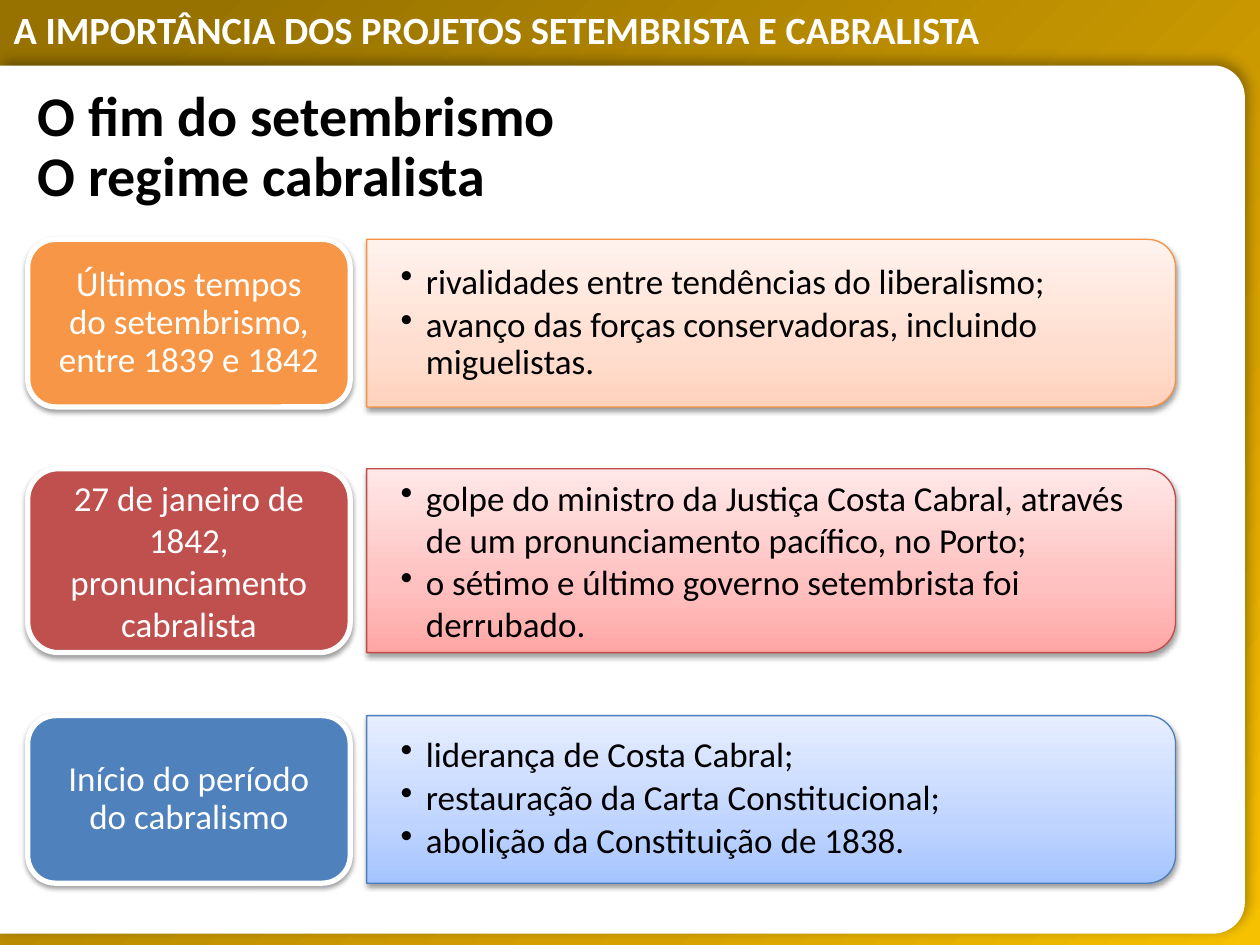
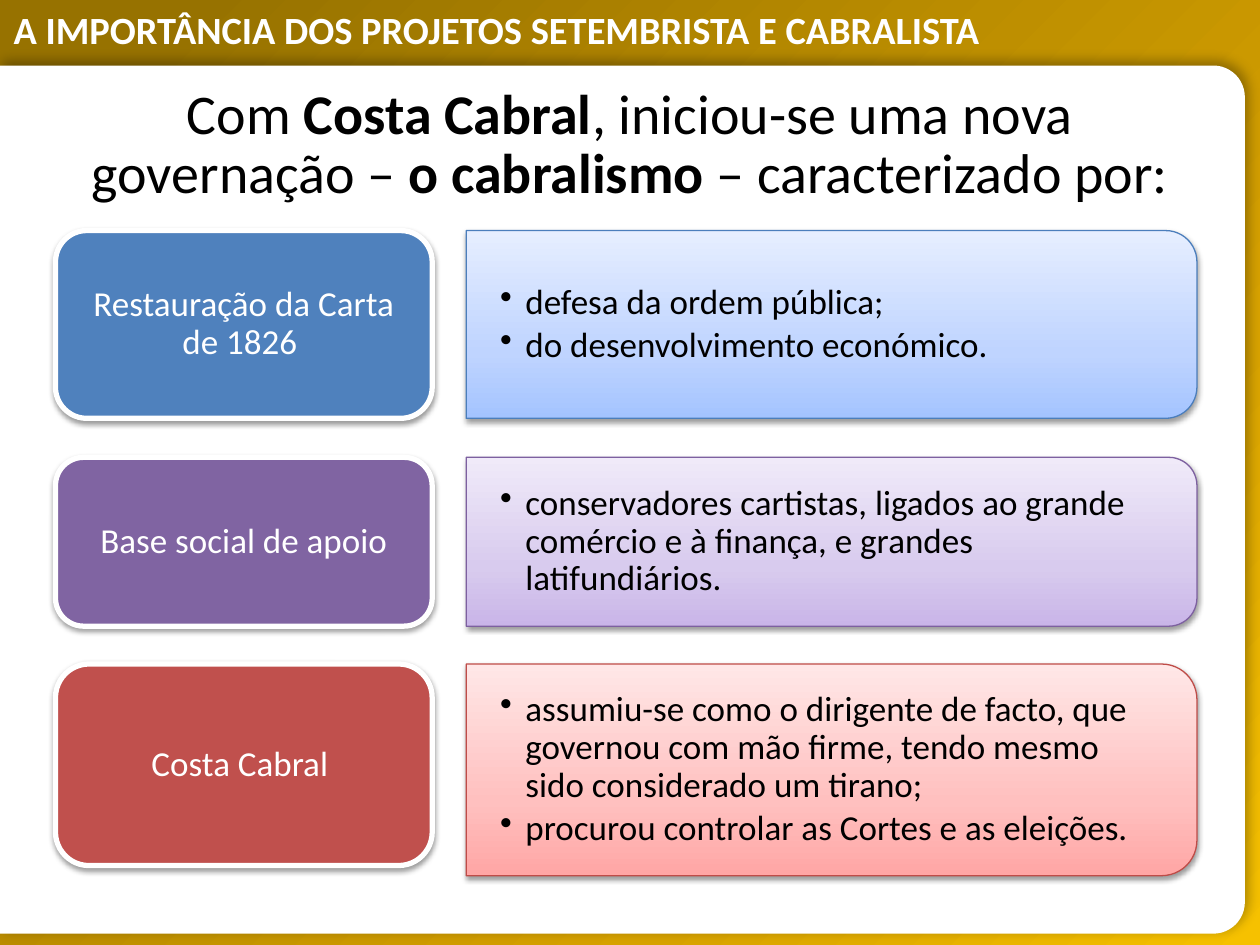
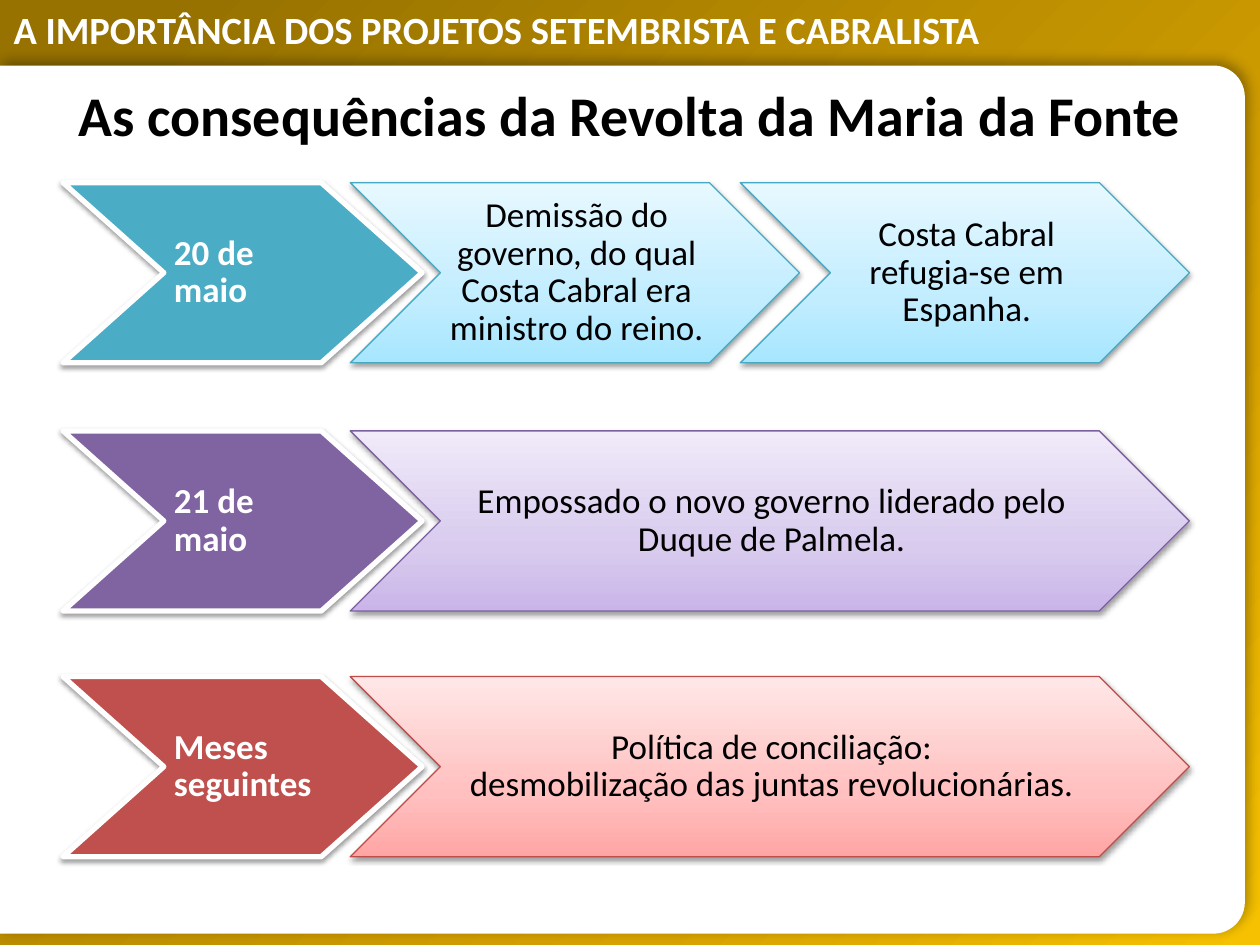
"""Build three slides on the Setembrista and Cabralista projects."""
from math import cos, pi, sin

from lxml import etree
from pptx import Presentation
from pptx.dml.color import RGBColor
from pptx.enum.shapes import MSO_SHAPE
from pptx.enum.text import MSO_ANCHOR, MSO_AUTO_SIZE, PP_ALIGN
from pptx.oxml.ns import qn
from pptx.util import Inches, Pt

RECTANGLE = MSO_SHAPE.RECTANGLE
ROUNDED = MSO_SHAPE.ROUNDED_RECTANGLE
CHEVRON = MSO_SHAPE.CHEVRON
LEFT, CENTER = PP_ALIGN.LEFT, PP_ALIGN.CENTER
TOP, MIDDLE = MSO_ANCHOR.TOP, MSO_ANCHOR.MIDDLE
NO_AUTOFIT = MSO_AUTO_SIZE.NONE

FONT = "Calibri"
COLORS = {
    "white": "FFFFFF", "black": "000000",
    "orange": "F79646", "orange line": "F69240",
    "red": "C0504D", "red line": "BF4C48",
    "blue": "4F81BD", "blue line": "4B7EBC",
    "purple": "8064A2", "purple line": "7D60A0",
    "aqua": "4BACC6", "aqua line": "46AAC5",
}
GRADIENTS = {
    "gold": [(9, "977200"), (72, "D7A200"), (100, "F6C100")],
    "orange": [(0, "FFD2BD"), (35, "FFDED0"), (100, "FFF2ED")],
    "red": [(0, "FFA6A5"), (35, "FFC0BF"), (100, "FFE7E7")],
    "blue": [(0, "A4C4FF"), (35, "BFD4FF"), (100, "E6EEFF")],
    "purple": [(0, "C9B5E8"), (35, "D8CBEE"), (100, "F0EAF9")],
    "aqua": [(0, "A7E6FF"), (35, "C1EDFF"), (100, "E7F8FF")],
}
CARD_SHADOW = {"alpha": 38, "blur": 3.1, "distance": 1.6, "angle": 90}
PANEL_SHADOW = {"alpha": 30, "blur": 7, "distance": 3, "angle": 315}


def rgb(name):
    """Return the named colour."""
    return RGBColor.from_string(COLORS[name])


def write(frame, paras, size=20, color="black", bold=False, align=LEFT, anchor=MIDDLE,
          spacing=0.9, after=0, bullets=False, insets=(0.1, 0.05, 0.1, 0.05)):
    """Fill a text frame with paragraphs, each a string or a list of (text, bold) spans."""
    frame.word_wrap = True
    frame.auto_size = NO_AUTOFIT
    frame.vertical_anchor = anchor
    (frame.margin_left, frame.margin_top,
     frame.margin_right, frame.margin_bottom) = map(Inches, insets)
    for index, content in enumerate(paras):
        para = frame.add_paragraph() if index else frame.paragraphs[0]
        para.alignment = align
        para.line_spacing = spacing
        para.space_before, para.space_after = Pt(0), Pt(after)
        if bullets:
            properties = para._p.get_or_add_pPr()
            properties.set("marL", str(Inches(0.2)))
            properties.set("indent", str(-Inches(0.2)))
            etree.SubElement(properties, qn("a:buChar"), char="•")
        spans = [(content, bold)] if isinstance(content, str) else content
        for text, heavy in spans:
            for number, line in enumerate(text.split("\n")):
                if number:
                    para.add_line_break()
                span = para.add_run()
                span.text = line
                span.font.name, span.font.size = FONT, Pt(size)
                span.font.bold = heavy
                span.font.color.rgb = rgb(color)


class Deck:
    """Hold the presentation, its shared style and the current slide."""

    def __init__(self):
        """Set the slide size and choose the title-only layout."""
        self.deck = Presentation()
        self.deck.slide_width, self.deck.slide_height = Inches(10), Inches(7.5)
        self.layout = self.deck.slide_layouts[5]
        self.page = None

    def new_page(self, paras, at, **style):
        """Add a slide and place its title."""
        self.page = self.deck.slides.add_slide(self.layout)
        title = self.page.shapes.title
        title.left, title.top, title.width, title.height = map(Inches, at)
        write(title.text_frame, paras, size=32, **style)

    def frame_layout(self, heading):
        """Draw the gold frame, white panel and heading, and move them to the layout."""
        backdrop = self.shape(RECTANGLE, (0, 0, 10, 7.5))
        self.gradient(backdrop, "gold", 315)
        panel = self.right_rounded((0, 0.52, 9.88, 6.89), 0.25)
        self.solid(panel, "white")
        self.shadow(panel, **PANEL_SHADOW)
        box = self.page.shapes.add_textbox(*map(Inches, (0.01, 0.14, 9.22, 0.35)))
        write(box.text_frame, [heading], size=22, color="white", bold=True,
              anchor=TOP, spacing=Pt(16))
        for shape in (backdrop, panel, box):
            self.layout.shapes.element.append(shape.element)

    def shape(self, kind, at):
        """Add a preset shape without line or shadow."""
        return self.plain(self.page.shapes.add_shape(kind, *map(Inches, at)))

    def right_rounded(self, at, radius):
        """Add a rectangle whose two right corners are rounded."""
        left, top, width, height = at
        right, bottom = left + width, top + height
        points = [(left, top)]
        for center_y, start in ((top + radius, -pi / 2), (bottom - radius, 0)):
            for step in range(13):
                turn = start + step * pi / 24
                points.append((right - radius + radius * cos(turn),
                               center_y + radius * sin(turn)))
        points.append((left, bottom))
        points = [(Inches(x), Inches(y)) for x, y in points]
        builder = self.page.shapes.build_freeform(*points[0])
        builder.add_line_segments(points[1:], close=True)
        return self.plain(builder.convert_to_shape())

    def plain(self, shape):
        """Strip a shape of its theme line and shadow."""
        shape.line.fill.background()
        shape.shadow.inherit = False
        return shape

    def solid(self, shape, color):
        """Fill a shape with one colour."""
        shape.fill.solid()
        shape.fill.fore_color.rgb = rgb(color)

    def gradient(self, shape, name, angle=90):
        """Fill a shape with a named gradient."""
        shape.fill.gradient()
        shape.fill.gradient_angle = angle
        stops = shape.element.spPr.find(qn("a:gradFill")).find(qn("a:gsLst"))
        for stop in list(stops):
            stops.remove(stop)
        for position, color in GRADIENTS[name]:
            stop = etree.SubElement(stops, qn("a:gs"), pos=str(position * 1000))
            etree.SubElement(stop, qn("a:srgbClr"), val=color)

    def shadow(self, shape, alpha, blur, distance, angle):
        """Give a shape an outer shadow."""
        effects = shape.element.spPr.find(qn("a:effectLst"))
        outer = etree.SubElement(effects, qn("a:outerShdw"), blurRad=str(Pt(blur)),
                                 dist=str(Pt(distance)), dir=str(angle * 60000),
                                 rotWithShape="0")
        color = etree.SubElement(outer, qn("a:srgbClr"), val=COLORS["black"])
        etree.SubElement(color, qn("a:alpha"), val=str(alpha * 1000))

    def outline(self, shape, color, width):
        """Give a shape a line and the card shadow."""
        shape.line.color.rgb = rgb(color)
        shape.line.width = Pt(width)
        self.shadow(shape, **CARD_SHADOW)

    def label(self, kind, at, color, paras, **style):
        """Add a solid shape with a white border and white text."""
        shape = self.shape(kind, at)
        self.solid(shape, color)
        self.outline(shape, "white", 3)
        write(shape.text_frame, paras, color="white", **style)
        return shape

    def detail(self, shape, color, paras, **style):
        """Turn a shape into a pale gradient card with black text."""
        self.gradient(shape, color)
        self.outline(shape, f"{color} line", 0.75)
        write(shape.text_frame, paras, **style)

    def topic(self, columns, top, heights, color, heading, bullets, inset,
              spacing=0.9, after=3):
        """Add a rounded label with its bulleted card to the right."""
        label_left, label_width, card_left, card_width = columns
        label_height, card_height = heights
        card = self.right_rounded((card_left, top, card_width, card_height), card_height / 6)
        self.detail(card, color, bullets, bullets=True, spacing=spacing, after=after,
                    insets=(0.27, 0.2, 0.35, 0.2))
        self.label(ROUNDED, (label_left, top, label_width, label_height), color, heading,
                   align=CENTER, spacing=spacing, insets=(inset, 0.11, inset, 0.11))

    def step(self, top, color, date, events):
        """Add a date chevron followed by equal event chevrons."""
        height, start, end, overlap = 1.43, 2.78, 9.44, 0.47
        date_shape = self.label(CHEVRON, (0.5, top, 2.85, height), color, [date], bold=True,
                                insets=(0.08, 0.08, 0.05, 0.08))
        date_shape.adjustments[0] = 0.56
        count = len(events)
        width = (end - start + overlap * (count - 1)) / count
        for index, event in enumerate(events):
            left = start + index * (width - overlap)
            self.detail(self.shape(CHEVRON, (left, top, width, height)), color, [event],
                        align=CENTER, insets=(0.03, 0.01, 0, 0.01))


def main():
    """Build and save the slides."""
    deck = Deck()
    deck.new_page(["O fim do setembrismo\nO regime cabralista"], (0.2, 0.65, 8.49, 1.05),
                  bold=True, spacing=Pt(34))
    deck.frame_layout("A IMPORTÂNCIA DOS PROJETOS SETEMBRISTA E CABRALISTA")
    columns = (0.22, 2.56, 2.91, 6.42)
    deck.topic(columns, 1.9, (1.33, 1.33), "orange",
               ["Últimos tempos do setembrismo, entre 1839 e 1842"],
               ["rivalidades entre tendências do liberalismo;",
                "avanço das forças conservadoras, incluindo miguelistas."], 0.16)
    deck.topic(columns, 3.72, (1.46, 1.46), "red",
               ["27 de janeiro de 1842,", "pronunciamento", "cabralista"],
               ["golpe do ministro da Justiça Costa Cabral, através de um "
                "pronunciamento pacífico, no Porto;",
                "o sétimo e último governo setembrista foi derrubado."],
               0.16, spacing=1.0, after=0)
    deck.topic(columns, 5.68, (1.33, 1.33), "blue", ["Início do período do cabralismo"],
               ["liderança de Costa Cabral;", "restauração da Carta Constitucional;",
                "abolição da Constituição de 1838."], 0.16)

    deck.new_page([[("Com ", False), ("Costa Cabral", True),
                    (", iniciou-se uma nova governação – ", False),
                    ("o cabralismo ", True), ("– caracterizado por:", False)]],
                  (0.49, 0.6, 9.02, 1.11), align=CENTER, spacing=Pt(34),
                  insets=(0.08, 0.08, 0.08, 0.08))
    columns = (0.44, 2.99, 3.7, 5.8)
    deck.topic(columns, 1.83, (1.49, 1.49), "blue", ["Restauração da Carta de 1826 "],
               ["defesa da ordem pública;", "do desenvolvimento económico."], 0.18)
    deck.topic(columns, 3.63, (1.34, 1.34), "purple", ["Base social de apoio"],
               ["conservadores cartistas, ligados ao grande comércio e à finança, "
                "e grandes latifundiários."], 0.18)
    deck.topic(columns, 5.27, (1.6, 1.68), "red", ["Costa Cabral "],
               ["assumiu-se como o dirigente de facto, que governou com mão firme, "
                "tendo mesmo sido considerado um tirano;",
                "procurou controlar as Cortes e as eleições."], 0.18)

    deck.new_page(["As consequências da Revolta da Maria da Fonte"], (0.5, 0.56, 9, 0.69),
                  bold=True, align=CENTER, spacing=1.0)
    deck.step(1.45, "aqua", "20 de\nmaio",
              ["Demissão do governo, do qual Costa Cabral era ministro do reino.",
               "Costa Cabral refugia-se em Espanha."])
    deck.step(3.42, "purple", "21 de\nmaio",
              ["Empossado o novo governo liderado pelo Duque de Palmela."])
    deck.step(5.37, "red", "Meses seguintes",
              ["Política de conciliação:\ndesmobilização das juntas revolucionárias."])
    deck.deck.save("out.pptx")


if __name__ == "__main__":
    main()
